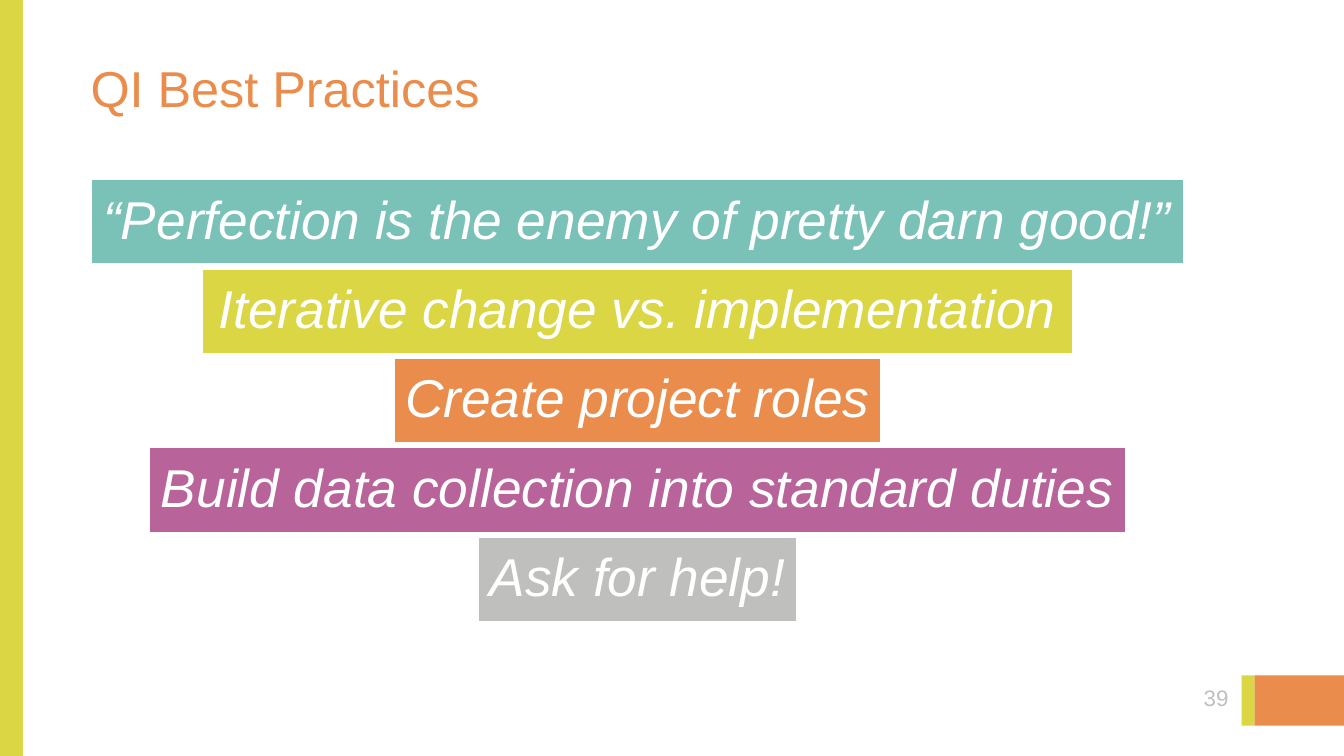
from pptx import Presentation
from pptx.dml.color import RGBColor
from pptx.enum.shapes import MSO_SHAPE
from pptx.enum.text import MSO_ANCHOR, PP_ALIGN
from pptx.util import Pt

RECTANGLE = MSO_SHAPE.RECTANGLE
TOP, MIDDLE = MSO_ANCHOR.TOP, MSO_ANCHOR.MIDDLE
LEFT, CENTER, RIGHT = PP_ALIGN.LEFT, PP_ALIGN.CENTER, PP_ALIGN.RIGHT

TITLE = "QI Best Practices"
PAGE_NUMBER = "39"
# (text, bar colour, bar width)
PRACTICES = [
    ("“Perfection is the enemy of pretty darn good!”", "teal", 779.8),
    ("Iterative change vs. implementation", "lime", 621.4),
    ("Create project roles", "orange", 347),
    ("Build data collection into standard duties", "purple", 697),
    ("Ask for help!", "gray", 226.8),
]

THEME = {
    "font": "Arial",
    "title_size": 36,
    "practice_size": 38,
    "page_size": 16,
    "teal": "7AC1B8",
    "lime": "DAD644",
    "orange": "EA8D4C",
    "purple": "B86399",
    "gray": "BFC0BE",
    "white": "FFFFFF",
}

SLIDE_WIDTH, SLIDE_HEIGHT = 960, 540
BAR_CENTER, BAR_TOP, BAR_HEIGHT, BAR_PITCH = 455.4, 128.2, 60.5, 63.85
FOOTER_TOP, FOOTER_HEIGHT = 482.4, 36
FOOTER_LIME_LEFT, FOOTER_ORANGE_LEFT = 887, 896


def color(name):
    return RGBColor.from_string(THEME[name])


def add_block(slide, left, top, width, height, fill, line=None):
    block = slide.shapes.add_shape(
        RECTANGLE, Pt(left), Pt(top), Pt(width), Pt(height))
    block.shadow.inherit = False
    block.fill.solid()
    block.fill.fore_color.rgb = color(fill)
    if line:
        block.line.color.rgb = color(line)
        block.line.width = Pt(1)
    else:
        block.line.fill.background()
    return block


def set_text(shape, text, size, ink, align, anchor, insets,
             wrap=True, italic=False, spacing=None):
    """Fill a shape with one paragraph; insets are (horizontal left, right, vertical)."""
    frame = shape.text_frame
    frame.word_wrap = wrap
    frame.vertical_anchor = anchor
    frame.margin_left, frame.margin_right = Pt(insets[0]), Pt(insets[1])
    frame.margin_top = frame.margin_bottom = Pt(insets[2])
    paragraph = frame.paragraphs[0]
    paragraph.text = text
    paragraph.alignment = align
    paragraph.line_spacing = spacing
    paragraph.font.name = THEME["font"]
    paragraph.font.size = Pt(THEME[size])
    paragraph.font.italic = italic
    paragraph.font.color.rgb = color(ink)


def main():
    deck = Presentation()
    deck.slide_width, deck.slide_height = Pt(SLIDE_WIDTH), Pt(SLIDE_HEIGHT)
    slide = deck.slides.add_slide(deck.slide_layouts[6])

    add_block(slide, 0, 0, 16.3, SLIDE_HEIGHT, "lime")
    add_block(slide, FOOTER_ORANGE_LEFT, FOOTER_TOP,
              SLIDE_WIDTH - FOOTER_ORANGE_LEFT, FOOTER_HEIGHT, "orange")
    add_block(slide, FOOTER_LIME_LEFT, FOOTER_TOP,
              FOOTER_ORANGE_LEFT - FOOTER_LIME_LEFT, FOOTER_HEIGHT, "lime")

    page = slide.shapes.add_textbox(Pt(802.8), Pt(FOOTER_TOP), Pt(74.7), Pt(32.4))
    set_text(page, PAGE_NUMBER, "page_size", "gray", RIGHT, MIDDLE, (7.2, 0, 3.6))

    for row, (practice, fill, width) in enumerate(PRACTICES):
        bar = add_block(slide, BAR_CENTER - width / 2, BAR_TOP + row * BAR_PITCH,
                        width, BAR_HEIGHT, fill, line="white")
        set_text(bar, practice, "practice_size", "white", CENTER, MIDDLE,
                 (8, 8, 8), wrap=False, italic=True, spacing=0.9)

    title = slide.shapes.add_textbox(Pt(57.6), Pt(41.8), Pt(745.2), Pt(54))
    set_text(title, TITLE, "title_size", "orange", LEFT, TOP,
             (7.2, 7.2, 3.6), spacing=0.9)

    deck.save("out.pptx")


if __name__ == "__main__":
    main()
